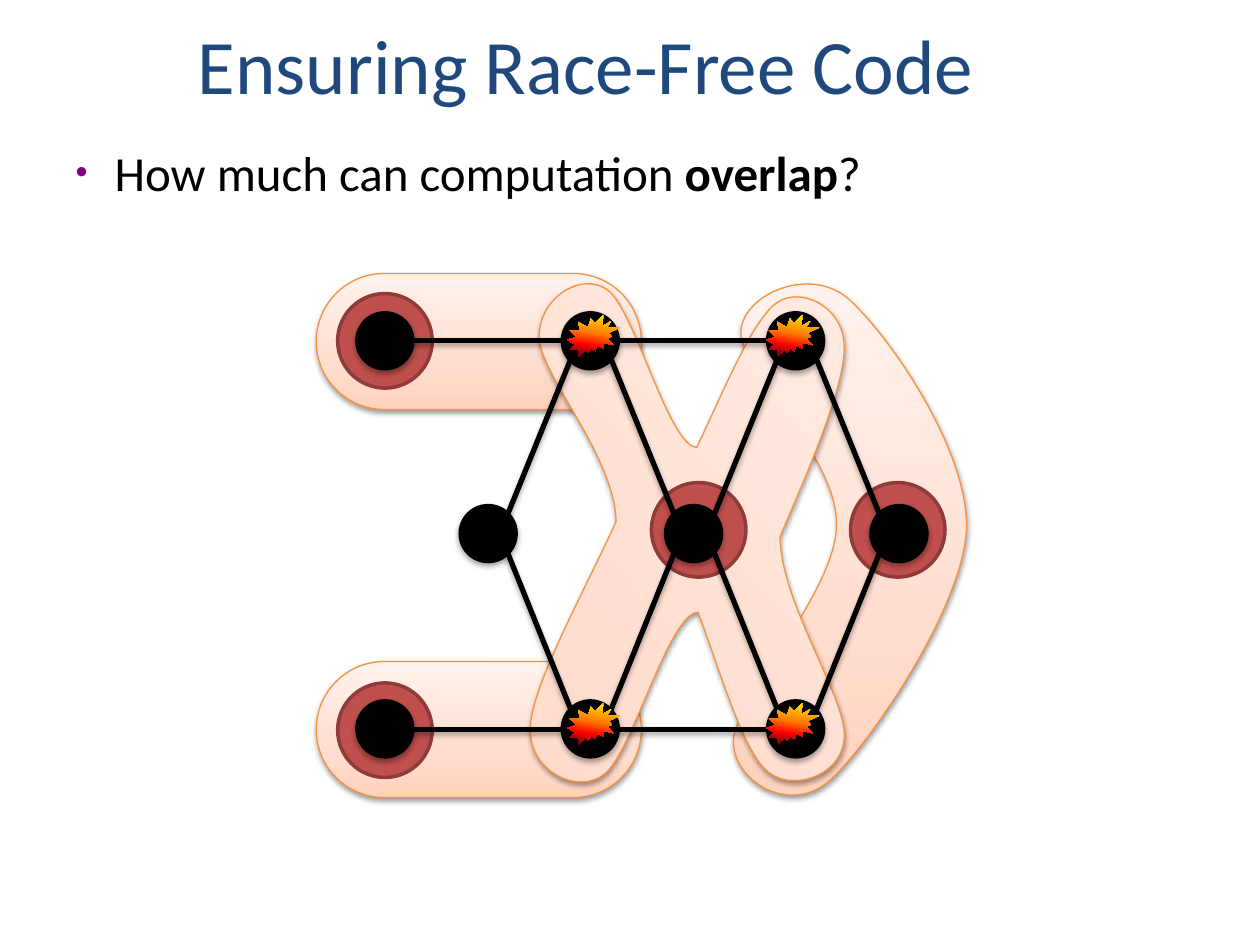
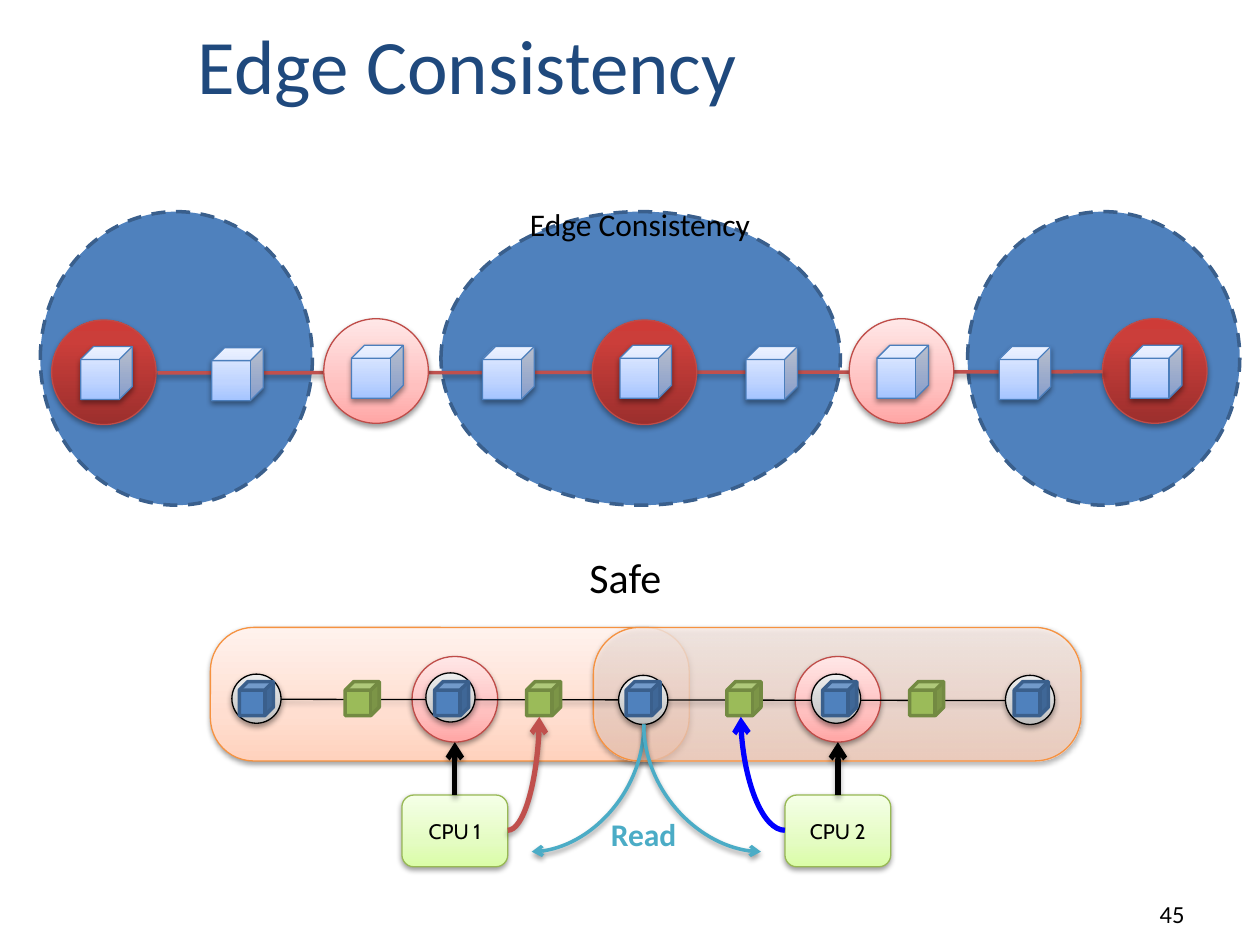
from math import cos, radians, sin

from pptx import Presentation
from pptx.dml.color import RGBColor
from pptx.enum.dml import MSO_LINE
from pptx.enum.shapes import MSO_CONNECTOR, MSO_SHAPE
from pptx.enum.text import MSO_ANCHOR, MSO_AUTO_SIZE, PP_ALIGN
from pptx.oxml import parse_xml
from pptx.oxml.ns import nsdecls, qn
from pptx.util import Pt

PX = 9144  # 100 px to the inch
OVAL, ROUND, CUBE = MSO_SHAPE.OVAL, MSO_SHAPE.ROUNDED_RECTANGLE, MSO_SHAPE.CUBE
BURST = MSO_SHAPE.EXPLOSION2
LINE, CURVE = MSO_CONNECTOR.STRAIGHT, MSO_CONNECTOR.CURVE
DASH, FIXED = MSO_LINE.DASH, MSO_AUTO_SIZE.NONE
TOP, MIDDLE, BOTTOM = MSO_ANCHOR.TOP, MSO_ANCHOR.MIDDLE, MSO_ANCHOR.BOTTOM
LEFT, CENTER, RIGHT = PP_ALIGN.LEFT, PP_ALIGN.CENTER, PP_ALIGN.RIGHT

# Colours
rgb = RGBColor.from_string
BLACK, NAVY, PURPLE = rgb("000000"), rgb("1F497D"), rgb("800080")
RED, MAROON, ROSE = rgb("C0504D"), rgb("8E3B39"), rgb("BF4C48")
BLUE, STEEL, SKY = rgb("4F81BD"), rgb("3A5F8C"), rgb("4B7EBC")
GREEN, OLIVE, LIME = rgb("9BBB59"), rgb("738A42"), rgb("98B955")
ORANGE, TEAL, PURE = rgb("F69240"), rgb("4BACC6"), rgb("0000FF")

# Gradients: stops of position, colour and opacity
PEACH = [(0, rgb("FFD2BD"), 100), (35, rgb("FFDED0"), 100), (100, rgb("FFF2ED"), 100)]
CLEAR = [(at, tint, part) for (at, tint, _), part in zip(PEACH, (72, 70, 80))]
PINK = [(0, rgb("FFA6A5"), 100), (35, rgb("FFC0BF"), 100), (100, rgb("FFE7E7"), 100)]
DEEP = [(0, rgb("9C2F2D"), 100), (80, rgb("CB3E3A"), 100), (100, rgb("CE3B37"), 100)]
ICE = [(0, rgb("A4C4FF"), 100), (35, rgb("BFD4FF"), 100), (100, rgb("E6EEFF"), 100)]
MINT = [(0, rgb("DAFDA7"), 100), (35, rgb("E4FCC2"), 100), (100, rgb("F5FFE7"), 100)]
GREY = [(0, rgb("BDBDBD"), 100), (35, rgb("D1D1D1"), 100), (100, rgb("EEEEEE"), 100)]
FIRE = [(0, rgb("FFF200"), 100), (45, rgb("FF7A00"), 100),
        (70, rgb("FF0300"), 100), (100, rgb("4D0808"), 100)]

# Looks: fill (colour, or angle and stops), line colour, line width,
# shadow (opacity and distance)
SOFT, HARD = (38, 20000), (35, 23000)
SCOPE = ((270, PEACH), ORANGE, 0.75, SOFT)
GLASS = ((270, CLEAR), ORANGE, 0.75, SOFT)
RING = (RED, MAROON, 2, None)
DOT = (BLACK, BLACK, 3, HARD)
SPARK = ((100, FIRE), None, 0, HARD)
ZONE = (BLUE, STEEL, 2, None)
CORE = ((270, DEEP), ROSE, 0.75, HARD)
HALO = ((270, PINK), ROSE, 0.75, SOFT)
BOX = ((270, ICE), SKY, 0.75, SOFT)
DISC = ((270, GREY), BLACK, 0.75, SOFT)
CHIP = ((270, MINT), LIME, 0.75, SOFT)
EDGE = (GREEN, OLIVE, 2, None)


def paint(shape, fill, color, width, shade, arrow=None):
    """Set fill, line, arrowhead and shadow, in the order the XML needs."""
    props = shape.element.spPr
    if isinstance(fill, RGBColor):
        shape.fill.solid()
        shape.fill.fore_color.rgb = fill
    elif fill:
        angle, stops = fill
        marks = "".join(
            f'<a:gs pos="{at * 1000}"><a:srgbClr val="{tint}">'
            f'<a:alpha val="{part * 1000}"/></a:srgbClr></a:gs>'
            for at, tint, part in stops)
        props.insert(2, parse_xml(
            f'<a:gradFill {nsdecls("a")} rotWithShape="1"><a:gsLst>{marks}</a:gsLst>'
            f'<a:lin ang="{angle * 60000}" scaled="0"/></a:gradFill>'))
    if color is None:
        shape.line.fill.background()
    else:
        shape.line.color.rgb = color
        shape.line.width = Pt(width)
    if arrow:
        props.find(qn("a:ln")).append(
            parse_xml(f'<a:{arrow} {nsdecls("a")} type="arrow"/>'))
    glow = ""
    if shade:
        glow = (f'<a:outerShdw blurRad="40000" dist="{shade[1]}" dir="5400000" '
                f'rotWithShape="0"><a:srgbClr val="000000">'
                f'<a:alpha val="{shade[0] * 1000}"/></a:srgbClr></a:outerShdw>')
    props.append(parse_xml(f'<a:effectLst {nsdecls("a")}>{glow}</a:effectLst>'))
    return shape


def put(slide, kind, box, look):
    """Add a preset shape (left, top, width, height) with a look."""
    return paint(slide.shapes.add_shape(kind, *(n * PX for n in box)), *look)


deck = Presentation()
deck.slide_width, deck.slide_height = 1000 * PX, 750 * PX

# Slides and their titles
race = deck.slides.add_slide(deck.slide_layouts[1])
safe = deck.slides.add_slide(deck.slide_layouts[5])
for slide, words in ((race, "Ensuring Race-Free Code"), (safe, "Edge Consistency")):
    title = slide.shapes.title
    title.left, title.top, title.width, title.height = 147 * PX, 8 * PX, 820 * PX, 84 * PX
    frame = title.text_frame
    frame.text = words
    frame.auto_size, frame.vertical_anchor = FIXED, BOTTOM
    para = frame.paragraphs[0]
    para.alignment = LEFT
    para.font.name, para.font.size, para.font.color.rgb = "Calibri", Pt(44), NAVY

# Slide 1: question
body = race.placeholders[1]
body.left, body.top, body.width, body.height = 50 * PX, 108 * PX, 908 * PX, 75 * PX
body.text_frame.auto_size = FIXED
para = body.text_frame.paragraphs[0]
props = para._p.get_or_add_pPr()
props.set("marL", str(31 * PX))
props.set("indent", str(-31 * PX))
for mark in (f'buClr {nsdecls("a")}><a:srgbClr val="{PURPLE}"/></a:buClr',
             f'buSzPct {nsdecls("a")} val="70000"/',
             f'buChar {nsdecls("a")} char="•"/'):
    props.append(parse_xml(f"<a:{mark}>"))
para.space_before = Pt(0)
para.font.name, para.font.size, para.font.color.rgb = "Calibri", Pt(28), BLACK
for words, bold in (("How much can computation ", False), ("overlap", True), ("?", False)):
    run = para.add_run()
    run.text, run.font.bold = words, bold

# Slide 1: scopes, each curved outline a start and then Bezier triples
bend = [(767, 420), (769, 356), (703, 263), (673, 237), (643, 211), (590, 233), (588, 263),
        (587, 293), (665, 362), (664, 417), (663, 471), (582, 556), (582, 589),
        (583, 622), (629, 647), (659, 619), (690, 591), (764, 483), (767, 420)]
cross = [(482, 230), (503, 244), (531, 355), (553, 355), (572, 316), (597, 253), (617, 240),
         (636, 227), (670, 244), (670, 275), (671, 306), (641, 375), (619, 426),
         (620, 480), (672, 554), (670, 585), (669, 616), (628, 629), (609, 612),
         (589, 596), (569, 524), (554, 486), (531, 486), (501, 600), (479, 615),
         (457, 631), (419, 611), (421, 577), (422, 544), (464, 469), (489, 414),
         (488, 362), (429, 298), (428, 268), (427, 237), (461, 215), (482, 230)]
for knots, (x, y, w, h), turn in ((bend, (582, 225, 185, 406), 0),
                                  (cross, (334, 222, 421, 411), 47.4)):
    if knots is cross:
        for top in (525, 217):
            put(race, ROUND, (251, top, 258, 108), SCOPE).adjustments[0] = 0.5
    # The frame is built first, then its outline is filled with curves
    pen = race.shapes.build_freeform(x * PX, y * PX)
    pen.add_line_segments([((x + w) * PX, (y + h) * PX)])
    scope = pen.convert_to_shape()
    scope.rotation = turn
    co, si = cos(radians(turn)), sin(radians(turn))
    marks = []
    for across, down in knots:
        dx, dy = across - x - w / 2, down - y - h / 2
        marks.append(f'<a:pt x="{round((w / 2 + dx * co + dy * si) * PX)}" '
                     f'y="{round((h / 2 - dx * si + dy * co) * PX)}"/>')
    trail = next(scope.element.iter(qn("a:path")))
    for part in list(trail):
        trail.remove(part)
    trail.append(parse_xml(f'<a:moveTo {nsdecls("a")}>{marks[0]}</a:moveTo>'))
    for i in range(1, len(marks), 3):
        trail.append(parse_xml(f'<a:cubicBezTo {nsdecls("a")}>'
                               f'{"".join(marks[i:i + 3])}</a:cubicBezTo>'))
    trail.append(parse_xml(f'<a:close {nsdecls("a")}/>'))
    paint(scope, *SCOPE)

for x, y in ((517, 383), (268, 542), (268, 233), (675, 383)):
    put(race, OVAL, (x, y, 75, 75), RING)

# Slide 1: lattice of edges, vertices and clashes
edges = [(x, y, x + 120, y) for y in (270, 579) for x in (327, 490)]
for x, sides in ((387, (1,)), (551, (-1, 1)), (714, (-1,))):
    for side in sides:
        for near, far in ((408, 285), (439, 563)):
            edges.append((x + 16 * side, near, x + 66 * side, far))
for ends in edges:
    paint(race.shapes.add_connector(LINE, *(n * PX for n in ends)), None, BLACK, 3, HARD)
for x, y in ((284, 249), (284, 557), (366, 402)):
    for col in range(3):
        put(race, OVAL, (x + 163 * col, y, 43, 43), DOT)
for y in (250, 558):
    for x in (450, 608):
        put(race, BURST, (x, y, 42, 33), SPARK)

# Slide 2: dashed zones
for x, w in ((32, 216), (768, 216), (350, 317)):
    put(safe, OVAL, (x, 168, w, 233), ZONE).line.dash_style = DASH

# Slide 2: upper chain
for x, y in ((875, 253), (41, 254)):
    put(safe, OVAL, (x, y, 83, 83), CORE)
paint(safe.shapes.add_connector(LINE, 125 * PX, 296 * PX, 875 * PX, 295 * PX),
      None, RED, 2, SOFT)
for x, y in ((383, 275), (592, 275), (793, 275), (897, 274), (168, 276), (64, 275)):
    put(safe, CUBE, (x, y, 41, 42), BOX)
for x, y, look in ((470, 254, CORE), (674, 253, HALO), (257, 253, HALO)):
    put(safe, OVAL, (x, y, 83, 83), look)
    put(safe, CUBE, (x + 22, 274, 41, 42), BOX)

# Slide 2: lower scopes, each with its processor
for x, w, bow, look, chip, name in ((167, 380, 0.325, SCOPE, 319, "CPU 1"),
                                    (471, 387, 0.347, GLASS, 623, "CPU 2")):
    put(safe, ROUND, (x, 498, w, 106), look).adjustments[0] = bow
    put(safe, OVAL, (chip + 8, 521, 68, 68), HALO)
    frame = put(safe, ROUND, (chip, 631, 84, 57), CHIP).text_frame
    frame.text = name
    frame.word_wrap, frame.vertical_anchor = False, MIDDLE
    para = frame.paragraphs[0]
    para.alignment = CENTER
    para.font.name, para.font.size, para.font.color.rgb = "Cabin", Pt(12), BLACK
    mid = (chip + 42) * PX
    paint(safe.shapes.add_connector(LINE, mid, 631 * PX, mid, 589 * PX),
          None, BLACK, 3, HARD, "tailEnd")

# Slide 2: lower chain
paint(safe.shapes.add_connector(LINE, 223 * PX, 555 * PX, 798 * PX, 556 * PX),
      None, BLACK, 0.75, SOFT)
for x, y in ((798, 536), (644, 535), (491, 536), (338, 534), (184, 535)):
    put(safe, OVAL, (x, y, 39, 39), DISC)
for look, spots in ((ZONE, (345, 497, 653, 805, 190)), (EDGE, (418, 274, 722, 577))):
    for x in spots:
        put(safe, CUBE, (x, 541, 27, 27), look)

# Slide 2: curved arrows, each leaving its first point sideways
for ends, color, width, shade, arrow in (
        ((403, 659, 428, 569), RED, 3, HARD, "tailEnd"),
        ((623, 659, 588, 569), PURE, 3, None, "tailEnd"),
        ((422, 676, 511, 575), TEAL, 2, SOFT, "headEnd"),
        ((604, 676, 511, 575), TEAL, 2, SOFT, "headEnd")):
    curve = safe.shapes.add_connector(CURVE, *(n * PX for n in ends))
    curve.element.spPr.find(qn("a:prstGeom")).set("prst", "curvedConnector2")
    paint(curve, None, color, width, shade, arrow)

# Slide 2: labels and page number
for words, box, size, color, bold, align, anchor in (
        ("Edge Consistency", (388, 158, 240, 74), 18, BLACK, False, CENTER, TOP),
        ("Safe", (458, 433, 113, 73), 24, BLACK, False, LEFT, TOP),
        ("Read", (475, 642, 106, 59), 18, TEAL, True, LEFT, TOP),
        ("45", (742, 692, 208, 50), 14, BLACK, False, RIGHT, BOTTOM)):
    frame = safe.shapes.add_textbox(*(n * PX for n in box)).text_frame
    frame.text = words
    frame.word_wrap, frame.vertical_anchor = True, anchor
    para = frame.paragraphs[0]
    para.alignment = align
    para.font.name, para.font.size, para.font.bold = "Calibri", Pt(size), bold
    para.font.color.rgb = color

deck.save("out.pptx")
